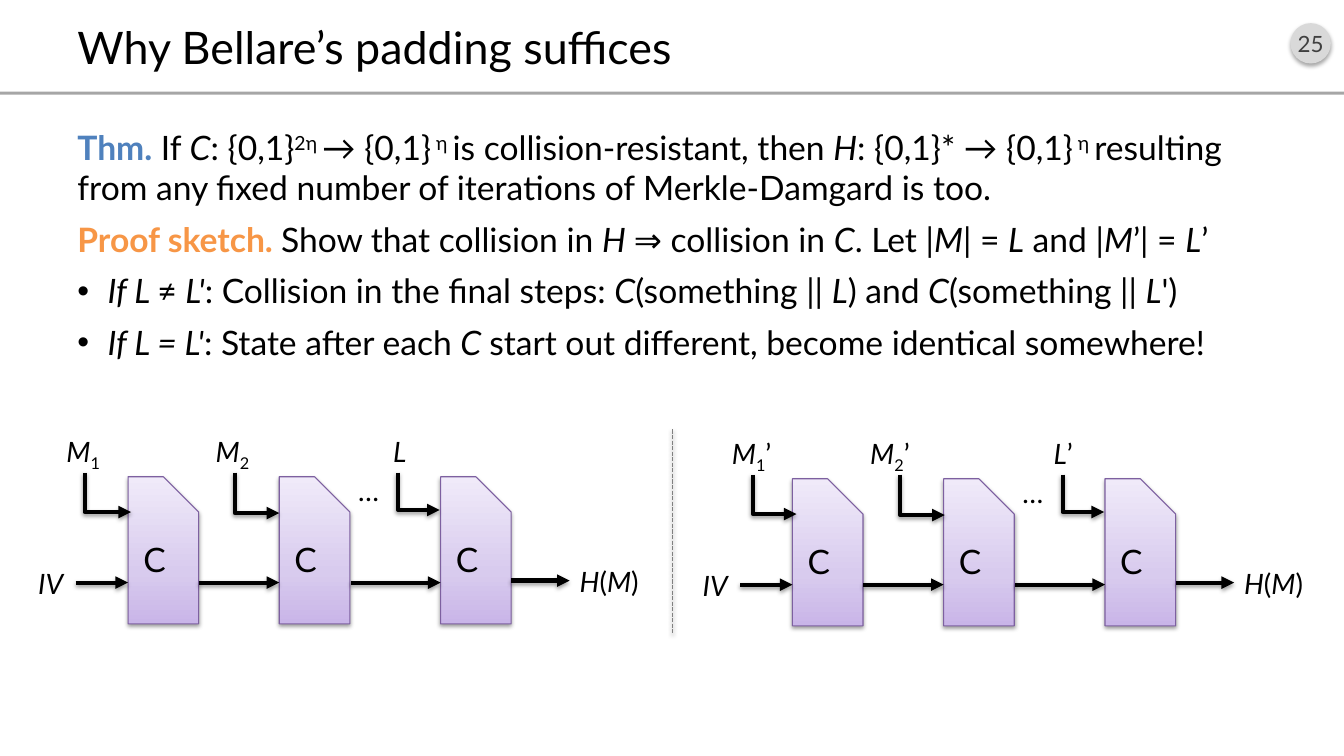
"""Build a slide on collision resistance of padded Merkle-Damgard hashing."""
from dataclasses import dataclass
from typing import Any, NamedTuple

from lxml import etree
from pptx import Presentation
from pptx import util as u
from pptx.dml import color
from pptx.enum import dml, shapes, text
from pptx.oxml import ns

BLACK, BLUE, ORANGE = "000000", "4F81BD", "F79646"
BOX_W, BOX_H, BOX_Y, FLOW_Y = 0.7, 1.46, 4.73, 5.78
BOX_X = (1.27, 2.77, 4.37)


class R(NamedTuple):
    text: str
    style: str = ""
    color: str = BLACK


@dataclass
class Feed:
    """A message block that enters a compression box from above."""
    runs: list[R]
    x: float
    w: float
    drop_x: float
    tip_x: float
    tip_y: float
    inset: float = 0.1
    align: str = "LEFT"


@dataclass
class Chain:
    """One hash computation, with its offset from the left one."""
    dx: float
    dy: float
    feeds: list[Feed]


def rgb(value: str) -> color.RGBColor:
    return color.RGBColor.from_string(value)


def add_xml(parent: Any, tag: str, **attrs: Any) -> Any:
    return etree.SubElement(parent, ns.qn(tag), {k: str(v) for k, v in attrs.items()})


def add_shadow(sp: Any, alpha: int = 38, dist: float = 1.6) -> None:
    effects = add_xml(sp._element.spPr, "a:effectLst")
    shadow = add_xml(effects, "a:outerShdw", blurRad=u.Pt(3.1), dist=u.Pt(dist),
                     dir=5400000, rotWithShape=0)
    add_xml(add_xml(shadow, "a:srgbClr", val=BLACK), "a:alpha", val=alpha * 1000)


def write(p: Any, runs: list[R], *, size: float, align: str = "LEFT",
          before: float = 0, bullet: bool = False) -> None:
    p.alignment = getattr(text.PP_ALIGN, align)
    p.space_before = u.Pt(before)
    if bullet:
        ppr = p._p.get_or_add_pPr()
        ppr.set("marL", str(u.Inches(0.3)))
        ppr.set("indent", str(-u.Inches(0.3)))
        add_xml(ppr, "a:buFont", typeface="Arial")
        add_xml(ppr, "a:buChar", char="•")
    for run in runs:
        r = p.add_run()
        r.text = run.text
        r.font.name, r.font.size = "Lato", u.Pt(size)
        r.font.color.rgb = rgb(run.color)
        r.font.bold, r.font.italic = "b" in run.style, "i" in run.style
        if "^" in run.style or "_" in run.style:
            r.font._element.set("baseline", "30000" if "^" in run.style else "-25000")


def add_text(parent: Any, x: float, y: float, w: float, h: float, runs: list[R], *,
             size: float = 20, wrap: bool = False, inset: float = 0.1,
             align: str = "LEFT", anchor: str = "TOP") -> Any:
    tf = parent.add_textbox(*map(u.Inches, (x, y, w, h))).text_frame
    tf.word_wrap = wrap
    tf.margin_left = tf.margin_right = u.Inches(inset)
    tf.vertical_anchor = getattr(text.MSO_ANCHOR, anchor)
    write(tf.paragraphs[0], runs, size=size, align=align)
    return tf


def add_shape(parent: Any, kind: str, x: float, y: float, w: float, h: float,
              fill: str) -> Any:
    sp = parent.add_shape(getattr(shapes.MSO_SHAPE, kind), *map(u.Inches, (x, y, w, h)))
    sp.fill.solid()
    sp.fill.fore_color.rgb = rgb(fill)
    sp.line.fill.background()
    return sp


def add_line(parent: Any, x0: float, y0: float, x1: float, y1: float, *,
             hexa: str = BLACK, width: float = 3, arrow: bool = True,
             bent: bool = False) -> Any:
    kind = shapes.MSO_CONNECTOR.STRAIGHT
    if bent:
        kind = shapes.MSO_CONNECTOR.ELBOW
        cx, cy, run, drop = (x0 + x1) / 2, (y0 + y1) / 2, (x1 - x0) / 2, (y1 - y0) / 2
        x0, y0, x1, y1 = cx + drop, cy - run, cx - drop, cy + run
    sp = parent.add_connector(kind, *map(u.Inches, (x0, y0, x1, y1)))
    if bent:
        sp._element.spPr.find(ns.qn("a:xfrm")).set("rot", "16200000")
        sp._element.spPr.find(ns.qn("a:prstGeom")).set("prst", "bentConnector2")
    sp.line.color.rgb, sp.line.width = rgb(hexa), u.Pt(width)
    if arrow:
        add_xml(sp.line._get_or_add_ln(), "a:tailEnd", type="triangle")
    add_shadow(sp)
    return sp


def add_box(parent: Any, x: float, y: float) -> None:
    sp = add_shape(parent, "SNIP_1_RECTANGLE", x, y, BOX_W, BOX_H, "D8CBEE")
    sp.adjustments[0] = 0.5
    ppr = sp._element.spPr
    old = ppr.find(ns.qn("a:solidFill"))
    grad = etree.Element(ns.qn("a:gradFill"), rotWithShape="1")
    stops = add_xml(grad, "a:gsLst")
    for pos, hexa in ((0, "C9B5E8"), (35, "D8CBEE"), (100, "F0EAF9")):
        add_xml(add_xml(stops, "a:gs", pos=pos * 1000), "a:srgbClr", val=hexa)
    add_xml(grad, "a:lin", ang=16200000, scaled=0)
    ppr.replace(old, grad)
    sp.line.color.rgb, sp.line.width = rgb("7D60A0"), u.Pt(0.75)
    add_shadow(sp)
    sp.text_frame.vertical_anchor = text.MSO_ANCHOR.MIDDLE
    write(sp.text_frame.paragraphs[0], [R("C")], size=24, align="CENTER")


def add_chain(s: Any, chain: Chain) -> None:
    g = s.shapes.add_group_shape().shapes
    dx, dy = chain.dx, chain.dy
    for x, feed in zip(BOX_X, chain.feeds):
        add_box(g, x + dx, BOX_Y + dy)
        add_text(g, feed.x, 4.26 + dy, feed.w, 0.44, feed.runs, inset=feed.inset,
                 wrap=feed.inset == 0, align=feed.align)
        add_line(g, feed.drop_x, 4.69 + dy, feed.tip_x, feed.tip_y, bent=True)
    for x0, x1, y in ((0.75, 1.27, FLOW_Y), (1.97, 2.77, FLOW_Y),
                      (3.48, 4.37, FLOW_Y), (5.07, 5.65, FLOW_Y - 0.02)):
        add_line(g, x0 + dx, y + dy, x1 + dx, y + dy)
    add_text(g, 0.28 + dx, 5.57 + dy, 0.47, 0.44, [R("IV", "i")])
    add_text(g, 5.65 + dx, 5.55 + dy, 0.81, 0.44,
             [R("H", "i"), R("("), R("M", "i"), R(")")])
    add_text(g, 3.46 + dx, 4.65 + dy, 0.58, 0.44, [R("…", "i")], wrap=True)


BODY = [
    [R("Thm.", "b", BLUE), R(" If "), R("C", "i"), R(": {0,1}"), R("2η ", "^"),
     R("→ {0,1}"), R(" η ", "^"), R("is collision-resistant, then "), R("H", "i"),
     R(": {0,1}* → {0,1}"), R(" η ", "^"),
     R("resulting from any fixed number of iterations of Merkle-Damgard is too.")],
    [R("Proof sketch. ", "b", ORANGE), R("Show that collision in "), R("H ", "i"),
     R("⇒ collision in "), R("C", "i"), R(". Let |"), R("M", "i"), R("| = "),
     R("L", "i"), R(" and |"), R("M", "i"), R("’| = "), R("L", "i"), R("’")],
    [R("If L ", "i"), R("≠ "), R("L'", "i"), R(": Collision in the final steps: "),
     R("C", "i"), R("(something || "), R("L", "i"), R(") and "), R("C", "i"),
     R("(something || "), R("L", "i"), R("')")],
    [R("If L = L'", "i"), R(": State after each "), R("C ", "i"),
     R("start out different, become identical somewhere!")],
]
M, L, PRIME = R("M", "i"), R("L", "i"), R("’")
CHAINS = [
    Chain(0, 0, [Feed([M, R("1", "_")], 0.56, 0.56, 0.84, 1.3, 5.08),
                 Feed([M, R("2", "_")], 2.04, 0.58, 2.33, 2.77, 5.09),
                 Feed([L], 3.8, 0.29, 3.95, 4.36, 5.06)]),
    Chain(6.59, 0.02, [
        Feed([M, R("1", "_"), PRIME], 7.16, 0.62, 7.47, 7.9, 5.1),
        Feed([M, R("2", "_"), PRIME], 8.63, 0.58, 8.93, 9.37, 5.11, 0),
        Feed([L, PRIME], 10.4, 0.29, 10.54, 10.95, 5.08, 0, "CENTER")]),
]


def main() -> None:
    prs = Presentation()
    prs.slide_width, prs.slide_height = u.Inches(13.33), u.Inches(7.5)
    s = prs.slides.add_slide(prs.slide_layouts[6])
    badge = add_shape(s.shapes, "OVAL", 12.8, 0.23, 0.4, 0.4, "D9D9D9")
    add_shadow(badge, 35, 1.8)
    tf = badge.text_frame
    tf.margin_left = tf.margin_right = 0
    tf.vertical_anchor, tf.word_wrap = text.MSO_ANCHOR.MIDDLE, False
    write(tf.paragraphs[0], [R("25", "", "404040")], size=16, align="CENTER")
    add_shape(s.shapes, "RECTANGLE", 0, 0.91, 13.33, 0.03, "A6A6A6").shadow.inherit = False
    add_text(s.shapes, 0.67, 0.16, 12, 0.6, [R("Why Bellare’s padding suffices")],
             size=32, wrap=True, anchor="MIDDLE")
    tf = add_text(s.shapes, 0.67, 1.21, 12, 5.75, BODY[0], size=24, wrap=True)
    for i, runs in enumerate(BODY[1:]):
        write(tf.add_paragraph(), runs, size=24, before=8, bullet=i > 0)
    for chain in CHAINS:
        add_chain(s, chain)
    divider = add_line(s.shapes, 6.67, 4.26, 6.67, 6.28, hexa="808080", width=1, arrow=False)
    divider.line.dash_style = dml.MSO_LINE.SQUARE_DOT
    prs.save("out.pptx")


if __name__ == "__main__":
    main()
